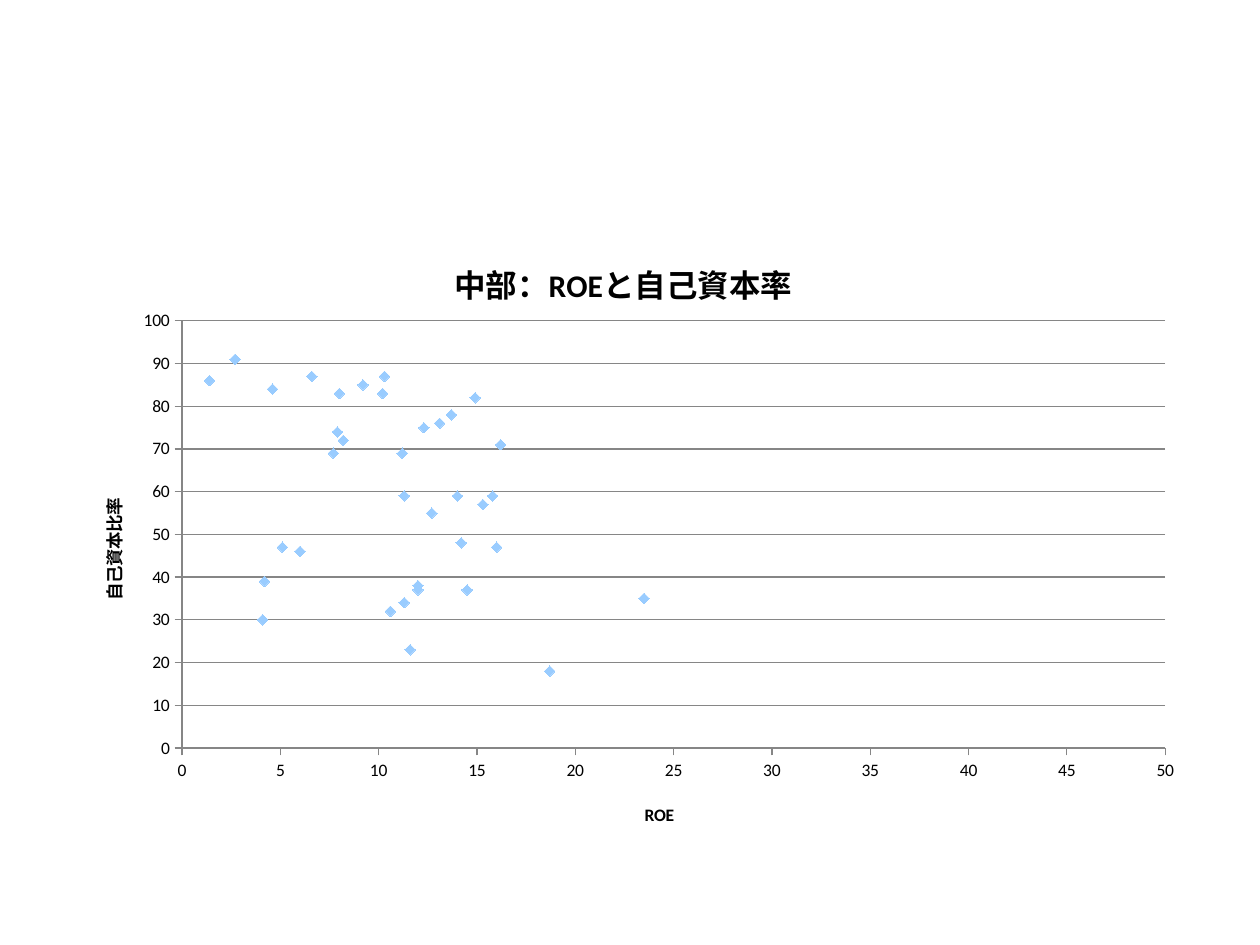
import pptx
import pptx.chart.data
import pptx.dml.color
import pptx.enum.chart
import pptx.util
from lxml import etree
from pptx.util import Inches

HUES = {"text": "000000", "line": "868686", "dot": "99CCFF"}
NS = "http://schemas.openxmlformats.org/drawingml/2006/chart"


def hue(name):
    return pptx.dml.color.RGBColor.from_string(HUES[name])


def write(frame, text, size=10, bold=True, color="text", face="Calibri"):
    frame.text = text
    font = frame.paragraphs[0].runs[0].font
    font.size = pptx.util.Pt(size)
    font.bold = bold
    font.name = face
    font.color.rgb = hue(color)


deck = pptx.Presentation()
deck.slide_width = Inches(10)
deck.slide_height = Inches(7.5)
slide = deck.slides.add_slide(deck.slide_layouts[6])

ROE = [2.7, 6.6, 10.3, 1.4, 9.2, 4.6, 10.2, 8, 14.9, 13.7, 13.1, 12.3,
       7.9, 8.2, 16.2, 7.7, 11.2, 15.8, 11.3, 14, 15.3, 12.7, 14.2, 5.1,
       16, 6, 4.2, 12, 14.5, 12, 23.5, 11.3, 10.6, 4.1, 11.6, 18.7]
RATIO = [91, 87, 87, 86, 85, 84, 83, 83, 82, 78, 76, 75,
         74, 72, 71, 69, 69, 59, 59, 59, 57, 55, 48, 47,
         47, 46, 39, 38, 37, 37, 35, 34, 32, 30, 23, 18]
data = pptx.chart.data.XyChartData()
dots = data.add_series("Series 1")
for x, y in zip(ROE, RATIO):
    dots.add_data_point(x, y)

kinds = pptx.enum.chart
chart = slide.shapes.add_chart(
    kinds.XL_CHART_TYPE.XY_SCATTER,
    Inches(0.5), Inches(1.75), Inches(9), Inches(4.95), data).chart
chart.has_legend = False
chart.font.name = "Calibri"
chart.font.size = pptx.util.Pt(10)
chart.font.color.rgb = hue("text")
chart.plots[0].vary_by_categories = False
write(chart.chart_title.text_frame, "中部：ROEと自己資本率", size=18)

for axis, name, top, step in ((chart.category_axis, "ROE", 50, 5),
                              (chart.value_axis, "自己資本比率", 100, 10)):
    axis.minimum_scale = 0
    axis.maximum_scale = top
    axis.major_unit = step
    axis.major_tick_mark = kinds.XL_TICK_MARK.OUTSIDE
    axis.minor_tick_mark = kinds.XL_TICK_MARK.NONE
    axis.tick_labels.number_format = "General"
    axis.tick_labels.number_format_is_linked = False
    axis.format.line.color.rgb = hue("line")
    axis.format.line.width = pptx.util.Pt(0.75)
    write(axis.axis_title.text_frame, name)

chart.category_axis.has_major_gridlines = False
chart.value_axis.has_major_gridlines = True
grid = chart.value_axis.major_gridlines.format.line
grid.color.rgb = hue("line")
grid.width = pptx.util.Pt(0.75)

row = chart.plots[0].series[0]
row.smooth = False
row.format.line.fill.background()
row.marker.style = kinds.XL_MARKER_STYLE.DIAMOND
row.marker.size = 6
row.marker.format.fill.solid()
row.marker.format.fill.fore_color.rgb = hue("dot")
row.marker.format.line.color.rgb = hue("dot")

root = chart.element
spin = root.xpath(".//c:valAx[last()]/c:title//a:bodyPr")[0]
spin.set("rot", "-5400000")
spin.set("vert", "horz")

SPOTS = [("c:chart/c:title", 1, {"x": 0.34, "y": 0.05}),
         ("c:chart/c:plotArea/c:valAx[1]/c:title", 1, {"x": 0.51, "y": 0.93}),
         ("c:chart/c:plotArea/c:valAx[2]/c:title", 1, {"x": 0.03, "y": 0.44}),
         ("c:chart/c:plotArea", 0,
          {"x": 0.105, "y": 0.161, "w": 0.867, "h": 0.685})]
for query, place, box in SPOTS:
    part = root.xpath(query)[0]
    for old in part.xpath("c:layout"):
        part.remove(old)
    frame = etree.Element(f"{{{NS}}}layout")
    part.insert(place, frame)
    hand = etree.SubElement(frame, f"{{{NS}}}manualLayout")
    if "w" in box:
        etree.SubElement(hand, f"{{{NS}}}layoutTarget", val="inner")
    for key in "xy":
        etree.SubElement(hand, f"{{{NS}}}{key}Mode", val="edge")
    for key, size in box.items():
        etree.SubElement(hand, f"{{{NS}}}{key}", val=str(size))

deck.save("out.pptx")
